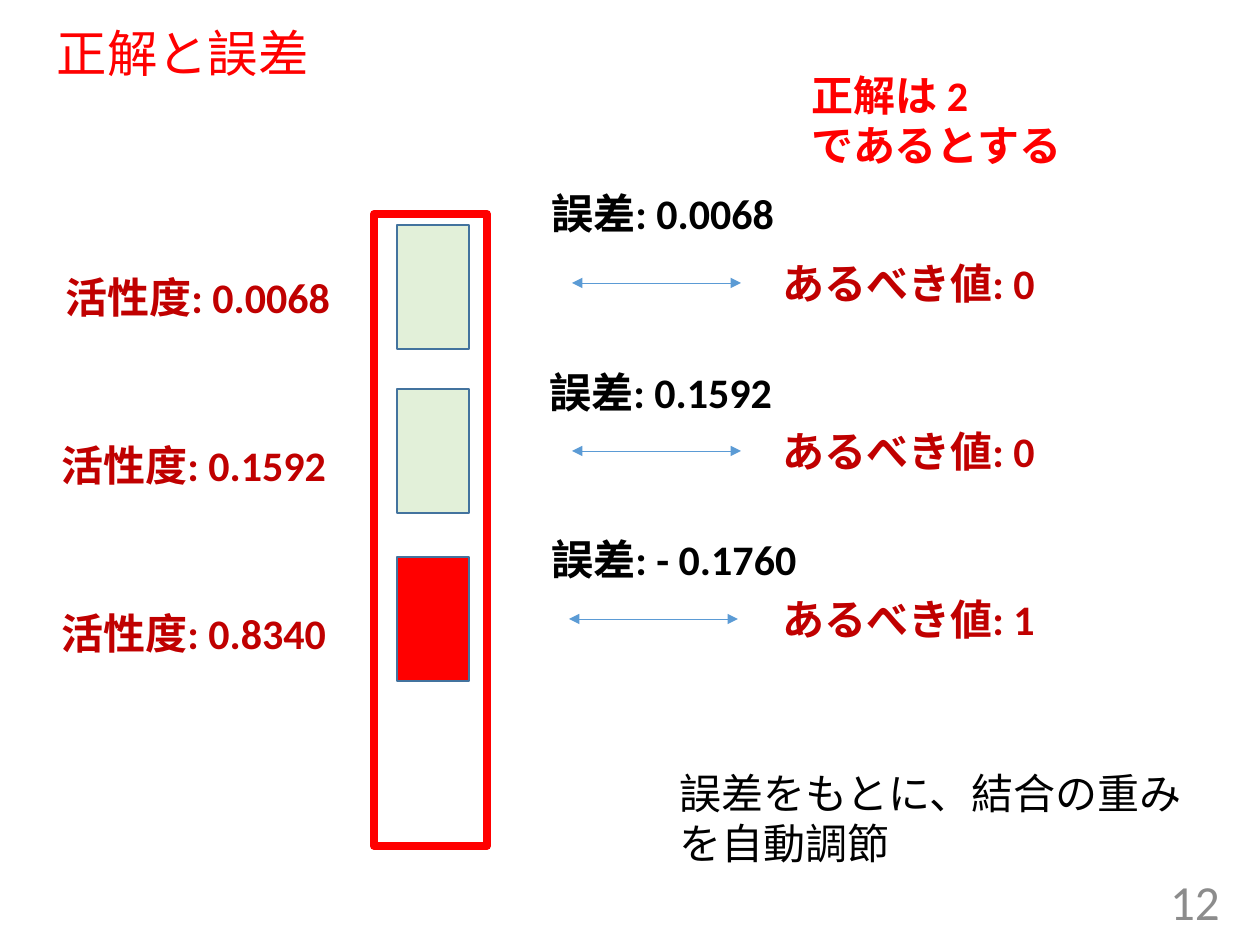
from dataclasses import dataclass

from lxml import etree
from pptx import Presentation
from pptx.dml.color import RGBColor
from pptx.enum.shapes import MSO_CONNECTOR, MSO_SHAPE
from pptx.enum.text import MSO_ANCHOR, MSO_AUTO_SIZE, PP_ALIGN
from pptx.oxml.ns import qn
from pptx.util import Emu, Pt

PX = 914400 // 126


@dataclass(frozen=True)
class Theme:
    red: str = "FF0000"
    dark_red: str = "C00000"
    black: str = "000000"
    grey: str = "8C8C8C"
    green: str = "E2F0D9"
    outline: str = "43739E"
    arrow: str = "5B9BD5"
    title_font: str = "Arial"
    body_font: str = "Calibri"
    title_size: float = 28.8
    body_size: int = 24
    number_size: int = 28


T = Theme()

TITLE = "正解と誤差"
ANSWER = ["正解は 2", "であるとする"]
SUMMARY = ["誤差をもとに、結合の重みを自動調節"]
PAGE = ["12"]

# activity, error, target, cell colour, then left edges of activity, error, arrow
# and tops of cell, error
ROWS = [
    ("活性度: 0.0068", "誤差: 0.0068", "あるべき値: 0", T.green, 53, 539, 572, 225, 181),
    ("活性度: 0.1592", "誤差: 0.1592", "あるべき値: 0", T.green, 49, 537, 572, 389, 360),
    ("活性度: 0.8340", "誤差: - 0.1760", "あるべき値: 1", T.red, 49, 539, 569, 557, 527),
]
ROW_TOP, ROW_STEP = 251, 168
ACTIVITY_DROP, ARROW_DROP = 14, 32
TEXT_H = 63
ARROW_W = 169
CELL_X, CELL_W, CELL_H = 397, 72, 124
FRAME = (374, 214, 113, 632)


def px(*values):
    return [Emu(v * PX) for v in values]


def rgb(value):
    return RGBColor.from_string(value)


def add_run(p, text, size, color, font, bold=False):
    r = p.add_run()
    r.text = text
    r.font.size = Pt(size)
    r.font.name = font
    r.font.bold = bold
    r.font.color.rgb = rgb(color)


def add_text(slide, box, lines, color, bold=True, size=T.body_size,
             align=PP_ALIGN.LEFT, anchor=MSO_ANCHOR.TOP):
    tf = slide.shapes.add_textbox(*px(*box)).text_frame
    tf.word_wrap = True
    tf.vertical_anchor = anchor
    for i, line in enumerate(lines):
        p = tf.add_paragraph() if i else tf.paragraphs[0]
        p.alignment = align
        add_run(p, line, size, color, T.body_font, bold)


def add_rect(slide, box, fill, line, width):
    sp = slide.shapes.add_shape(MSO_SHAPE.RECTANGLE, *px(*box))
    sp.shadow.inherit = False
    if fill:
        sp.fill.solid()
        sp.fill.fore_color.rgb = rgb(fill)
    else:
        sp.fill.background()
    sp.line.color.rgb = rgb(line)
    sp.line.width = Pt(width)


def add_double_arrow(slide, x, y):
    line = slide.shapes.add_connector(MSO_CONNECTOR.STRAIGHT, *px(x, y, x + ARROW_W, y))
    line.line.color.rgb = rgb(T.arrow)
    line.line.width = Pt(0.5)
    ln = line.line._get_or_add_ln()
    for end in ("a:headEnd", "a:tailEnd"):
        etree.SubElement(ln, qn(end), type="triangle")
    etree.SubElement(line._element.spPr, qn("a:effectLst"))


def add_title(slide):
    title = slide.shapes.title
    title.left, title.top, title.width, title.height = px(44, 24, 1166, 64)
    tf = title.text_frame
    tf.auto_size = MSO_AUTO_SIZE.NONE
    tf.vertical_anchor = MSO_ANCHOR.MIDDLE
    p = tf.paragraphs[0]
    p.alignment = PP_ALIGN.LEFT
    p.line_spacing = 0.9
    add_run(p, TITLE, T.title_size, T.red, T.title_font)


def main():
    prs = Presentation()
    prs.slide_width, prs.slide_height = px(1260, 945)
    slide = prs.slides.add_slide(prs.slide_layouts[5])
    add_title(slide)
    add_text(slide, (799, 63, 309, 165), ANSWER, T.red)

    for i, row in enumerate(ROWS):
        activity, error, target, fill, activity_x, error_x, arrow_x, cell_y, error_y = row
        y = ROW_TOP + i * ROW_STEP
        add_text(slide, (activity_x, y + ACTIVITY_DROP, 379, TEXT_H), [activity], T.dark_red)
        add_text(slide, (770, y, 379, TEXT_H), [target], T.dark_red)
        add_text(slide, (error_x, error_y, 289, TEXT_H), [error], T.black)
        add_double_arrow(slide, arrow_x, y + ARROW_DROP)
        add_rect(slide, (CELL_X, cell_y, CELL_W, CELL_H), fill, T.outline, 1)

    add_rect(slide, FRAME, None, T.red, 4.5)
    add_text(slide, (667, 761, 562, 115), SUMMARY, T.black, bold=False)
    add_text(slide, (949, 876, 283, 50), PAGE, T.grey, bold=False, size=T.number_size,
             align=PP_ALIGN.RIGHT, anchor=MSO_ANCHOR.MIDDLE)
    prs.save("out.pptx")


if __name__ == "__main__":
    main()
